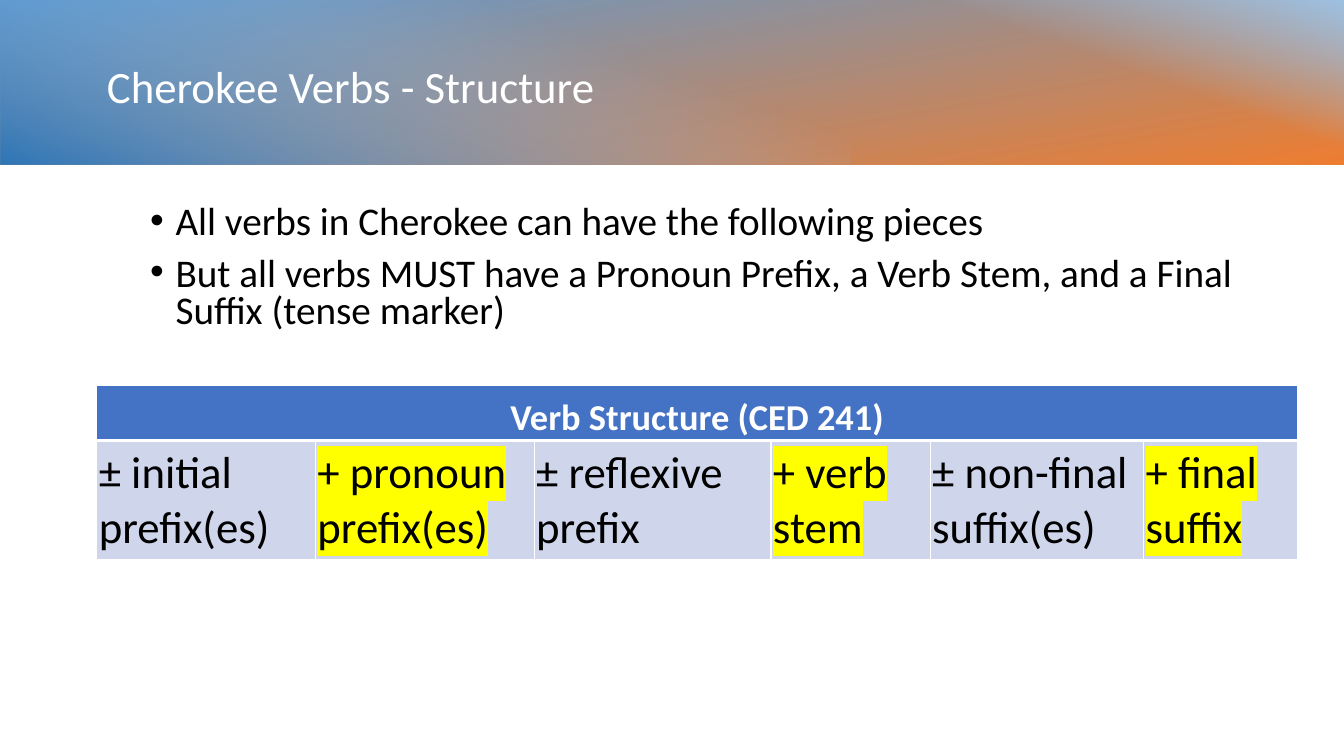
from pptx import Presentation
from pptx.dml.color import RGBColor
from pptx.enum.shapes import MSO_SHAPE
from pptx.enum.text import MSO_ANCHOR, MSO_AUTO_SIZE, PP_ALIGN
from pptx.oxml.ns import qn
from pptx.util import Cm, Pt
from lxml.etree import Element, SubElement

WHITE = RGBColor(0xFF, 0xFF, 0xFF)
BLACK = RGBColor(0, 0, 0)
BLUE = RGBColor(0x5B, 0x9B, 0xD5)
ORANGE = RGBColor(0xED, 0x7D, 0x31)
SKY = RGBColor(0x9D, 0xC3, 0xE6)
NAVY = RGBColor(0x2E, 0x75, 0xB6)
HEAD = RGBColor(0x44, 0x72, 0xC4)
PALE = RGBColor(0xCF, 0xD5, 0xEA)
YELLOW = RGBColor(0xFF, 0xFF, 0)
FONT = "Calibri"

TITLE = "Cherokee Verbs - Structure"
POINTS = [
    "All verbs in Cherokee can have the following pieces",
    "But all verbs MUST have a Pronoun Prefix, a Verb Stem, "
    "and a Final Suffix (tense marker)",
]
CAPTION = "Verb Structure (CED 241)"
# text, column width in cm; required parts start with "+"
PARTS = [
    ("± initial prefix(es)", 5.51),
    ("+ pronoun prefix(es)", 5.51),
    ("± reflexive prefix", 5.97),
    ("+ verb stem", 4.01),
    ("± non-final suffix(es)", 5.38),
    ("+ final suffix", 3.89),
]
ROWS = [1.4, 3.0]
# left, width, rotation, angle, (position, colour, opacity) of each stop
BANDS = [
    (0, 33.88, 270, 170, [(0, BLUE, 1), (1, ORANGE, 1)]),
    (19.82, 14.07, 270, 20, [(0.59, SKY, 0), (1, SKY, 1)]),
    (0, 21.44, 90, 20, [(0.29, SKY, 0), (1, NAVY, 1)]),
]
DEPTH, MIDDLE = 4.22, 2.03


def add_band(group, left, width, turn, angle, stops):
    """Add a strip drawn upright and turned on its side."""
    band = group.shapes.add_shape(
        MSO_SHAPE.RECTANGLE, Cm(left + (width - DEPTH) / 2),
        Cm(MIDDLE - width / 2), Cm(DEPTH), Cm(width))
    band.rotation = turn
    band.shadow.inherit = False
    band.line.fill.background()
    band.fill.gradient()
    band.fill.gradient_angle = 360 - angle
    for stop, (place, color, alpha) in zip(band.fill.gradient_stops, stops):
        stop.position = place
        stop.color.rgb = color
    tints = band._element.spPr.iter(qn("a:srgbClr"))
    for tint, (_, _, alpha) in zip(tints, stops):
        if alpha < 1:
            SubElement(tint, qn("a:alpha")).set("val", str(alpha * 100000))


def style(para, size, color, bold=False):
    for run in para.runs:
        font = run.font
        font.name, font.size, font.bold = FONT, Pt(size), bold
        font.color.rgb = color


def place(shape, left, top, width, height):
    shape.left, shape.top = Cm(left), Cm(top)
    shape.width, shape.height = Cm(width), Cm(height)


def mark(run):
    """Highlight a run in yellow."""
    light = Element(qn("a:highlight"))
    SubElement(light, qn("a:srgbClr")).set("val", str(YELLOW))
    run.font._element.find(qn("a:solidFill")).addnext(light)


def edge(cell, widths):
    """Draw white borders; widths are left, right, top, bottom in points."""
    props = cell._tc.get_or_add_tcPr()
    for i, (side, width) in enumerate(zip("LRTB", widths)):
        line = Element(qn(f"a:ln{side}"), w=str(Pt(width)))
        fill = SubElement(line, qn("a:solidFill"))
        SubElement(fill, qn("a:srgbClr")).set("val", str(WHITE))
        props.insert(i, line)


def fill_cell(cell, text, size, color, back, anchor, bold=False):
    cell.text_frame.text = text
    cell.vertical_anchor = anchor
    cell.margin_left = cell.margin_right = cell.margin_top = Cm(0.05)
    cell.margin_bottom = 0
    cell.fill.solid()
    cell.fill.fore_color.rgb = back
    style(cell.text_frame.paragraphs[0], size, color, bold)


def add_parts(slide):
    widths = [width for _, width in PARTS]
    table = slide.shapes.add_table(
        2, len(PARTS), Cm(2.44), Cm(9.7), Cm(sum(widths)), Cm(sum(ROWS))).table
    for row, height in zip(table.rows, ROWS):
        row.height = Cm(height)
    table.cell(0, 0).merge(table.cell(0, len(PARTS) - 1))
    head = table.cell(0, 0)
    fill_cell(head, CAPTION, 26, WHITE, HEAD, MSO_ANCHOR.BOTTOM, True)
    head.text_frame.paragraphs[0].alignment = PP_ALIGN.CENTER
    for i, (text, width) in enumerate(PARTS):
        table.columns[i].width = Cm(width)
        cell = table.cell(1, i)
        fill_cell(cell, text, 32, BLACK, PALE, MSO_ANCHOR.MIDDLE)
        if text.startswith("+"):
            mark(cell.text_frame.paragraphs[0].runs[0])
        edge(table.cell(0, i), (1, 1, 1, 3))
        edge(cell, (1, 1, 3, 1))


def main():
    deck = Presentation()
    deck.slide_width, deck.slide_height = Cm(33.87), Cm(19.05)
    slide = deck.slides.add_slide(deck.slide_layouts[1])

    group = slide.shapes.add_group_shape()
    for band in BANDS:
        add_band(group, *band)
    slide.shapes._spTree.insert(2, group._element)

    title, body = slide.placeholders
    place(title, 2.44, 0.84, 29.11, 2.79)
    frame = title.text_frame
    frame.text = TITLE
    frame.vertical_anchor = MSO_ANCHOR.MIDDLE
    frame.auto_size = MSO_AUTO_SIZE.NONE
    para = frame.paragraphs[0]
    para.alignment, para.line_spacing = PP_ALIGN.LEFT, 0.9
    style(para, 32, WHITE)

    place(body, 3.53, 5.05, 28.02, 3.71)
    frame = body.text_frame
    frame.text = "\n".join(POINTS)
    frame.auto_size = MSO_AUTO_SIZE.NONE
    for para in frame.paragraphs:
        para.line_spacing, para.space_before = 0.8, Pt(10)
        props = para._p.get_or_add_pPr()
        props.set("marL", str(Cm(0.64)))
        props.set("indent", str(-Cm(0.64)))
        style(para, 28, BLACK)

    add_parts(slide)
    deck.save("out.pptx")


if __name__ == "__main__":
    main()
